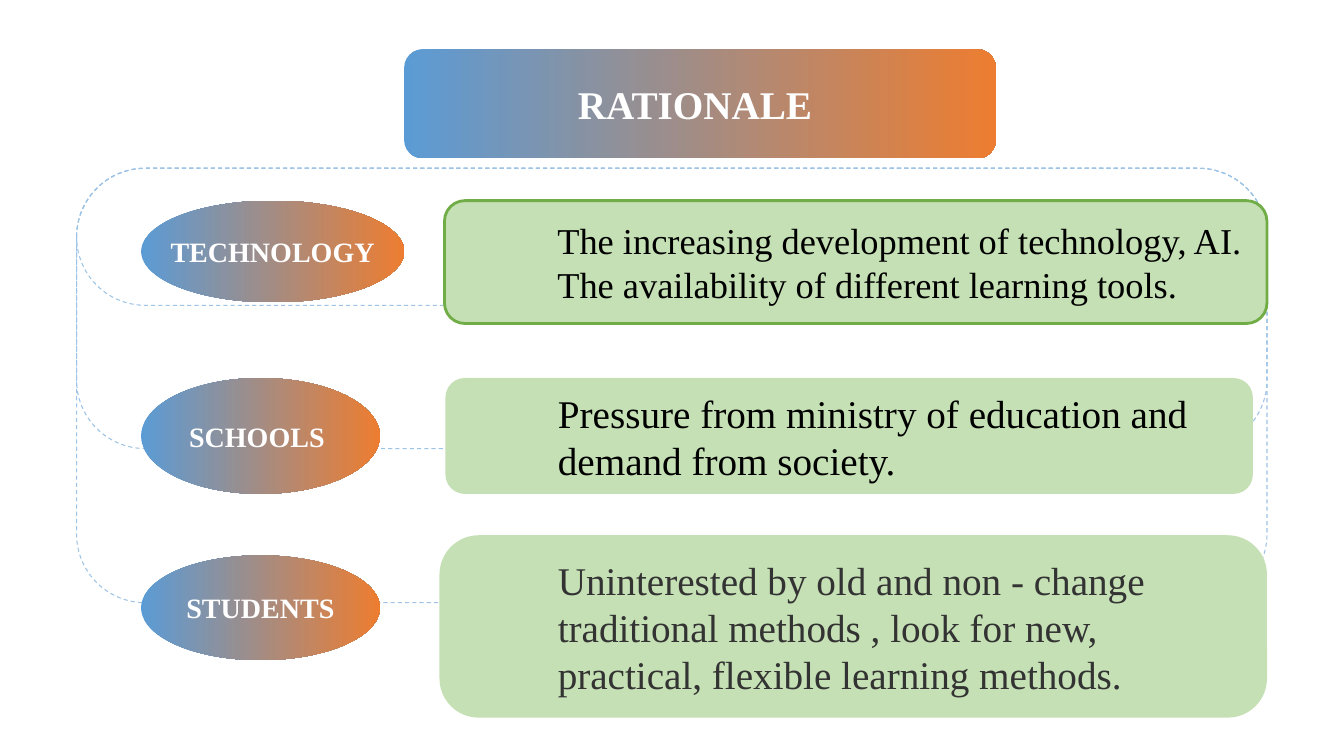
from dataclasses import dataclass

import pptx
import pptx.dml.color
import pptx.enum.dml
import pptx.enum.shapes
import pptx.enum.text
import pptx.util

Pt = pptx.util.Pt
RGBColor = pptx.dml.color.RGBColor
Kind = pptx.enum.shapes.MSO_SHAPE
Align = pptx.enum.text.PP_ALIGN

WHITE = RGBColor(0xFF, 0xFF, 0xFF)
BLACK = RGBColor(0x00, 0x00, 0x00)
CHARCOAL = RGBColor(0x33, 0x33, 0x33)
BLUE = RGBColor(0x5B, 0x9B, 0xD5)
ORANGE = RGBColor(0xED, 0x7D, 0x31)
PALE_BLUE = RGBColor(0x9D, 0xC3, 0xE6)
PALE_GREEN = RGBColor(0xC5, 0xE0, 0xB4)
GREEN = RGBColor(0x70, 0xAD, 0x47)

FONT = "Times New Roman"
FRAME_RADIUS = 49
FRAME_HEIGHTS = (97.9, 200.2, 310.3)
LABEL_LEFT = 100.8


@dataclass(frozen=True)
class Area:
    left: float
    top: float
    width: float
    height: float


@dataclass(frozen=True)
class Reason:
    label: str
    label_area: Area
    text: str
    text_area: Area
    size: float = 28
    color: RGBColor = BLACK
    corner: float = 0.1667
    outline: RGBColor | None = None
    label_shift: float = 0


REASONS = (
    Reason("TECHNOLOGY", Area(LABEL_LEFT, 143.3, 187.9, 72.7),
           "The increasing development of technology, AI. "
           "The availability of different learning tools.",
           Area(317.5, 143.3, 587.5, 87.8), size=26, outline=GREEN),
    Reason("SCHOOLS", Area(LABEL_LEFT, 270, 170.6, 82.8),
           "Pressure from ministry of education and demand from society.",
           Area(318.2, 270, 576.7, 82.8), label_shift=5),
    Reason("STUDENTS", Area(LABEL_LEFT, 396.7, 170.6, 74.9),
           "Uninterested by old and non - change traditional methods , "
           "look for new, practical, flexible learning methods.",
           Area(313.9, 382.3, 591.1, 130.3), color=CHARCOAL, corner=0.215),
)


def add_box(page, kind, area: Area):
    box = page.shapes.add_shape(
        kind, Pt(area.left), Pt(area.top), Pt(area.width), Pt(area.height))
    box.shadow.inherit = False
    box.line.fill.background()
    return box


def write(box, text: str, size: float, color: RGBColor, align, bold: bool = False,
          wrap: bool = True, left: float = 7.2, right: float = 7.2) -> None:
    frame = box.text_frame
    frame.word_wrap = wrap
    frame.vertical_anchor = pptx.enum.text.MSO_ANCHOR.MIDDLE
    frame.margin_left, frame.margin_right = Pt(left), Pt(right)
    frame.margin_top = frame.margin_bottom = Pt(3.6)
    para = frame.paragraphs[0]
    para.text = text
    para.alignment = align
    para.font.name = FONT
    para.font.size = Pt(size)
    para.font.bold = bold
    para.font.color.rgb = color


def add_frame(page, height: float) -> None:
    frame = add_box(page, Kind.ROUNDED_RECTANGLE, Area(54.7, 120.2, 850.3, height))
    frame.adjustments[0] = FRAME_RADIUS / height
    frame.fill.background()
    frame.line.color.rgb = PALE_BLUE
    frame.line.width = Pt(0.75)
    frame.line.dash_style = pptx.enum.dml.MSO_LINE.DASH


def add_gradient_box(page, kind, area: Area, text: str, size: float,
                     wrap: bool, shift: float) -> None:
    box = add_box(page, kind, area)
    box.fill.gradient()
    box.fill.gradient_angle = 0
    for stop, color in zip(box.fill.gradient_stops, (BLUE, ORANGE)):
        stop.color.rgb = color
    write(box, text, size, WHITE, Align.CENTER, bold=True, wrap=wrap, right=7.2 + shift)


def add_reason(page, reason: Reason) -> None:
    panel = add_box(page, Kind.ROUNDED_RECTANGLE, reason.text_area)
    panel.adjustments[0] = reason.corner
    panel.fill.solid()
    panel.fill.fore_color.rgb = PALE_GREEN
    if reason.outline is not None:
        panel.line.color.rgb = reason.outline
        panel.line.width = Pt(2)
    write(panel, reason.text, reason.size, reason.color, Align.LEFT, left=76.3)
    add_gradient_box(page, Kind.OVAL, reason.label_area, reason.label, 20,
                     wrap=False, shift=reason.label_shift)


def main() -> None:
    deck = pptx.Presentation()
    deck.slide_width, deck.slide_height = Pt(960), Pt(540)
    page = deck.slides.add_slide(deck.slide_layouts[6])

    # Dashed frames behind the rows
    for height in FRAME_HEIGHTS:
        add_frame(page, height)

    # Reasons with their labels
    for reason in REASONS:
        add_reason(page, reason)

    # Title
    add_gradient_box(page, Kind.ROUNDED_RECTANGLE, Area(288.7, 35.3, 422.6, 77.8),
                     "RATIONALE", 28, wrap=True, shift=7)

    deck.save("out.pptx")


if __name__ == "__main__":
    main()
